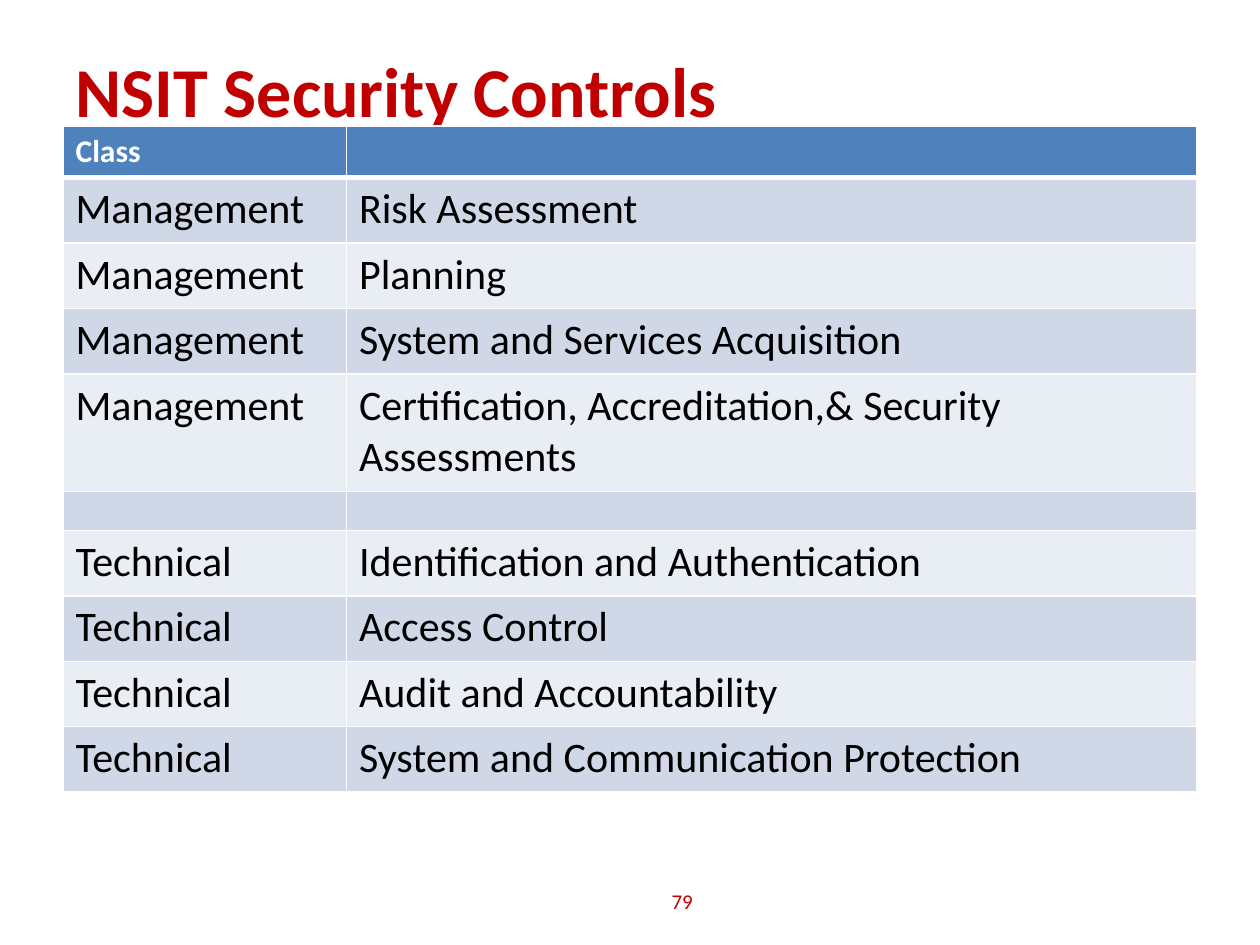
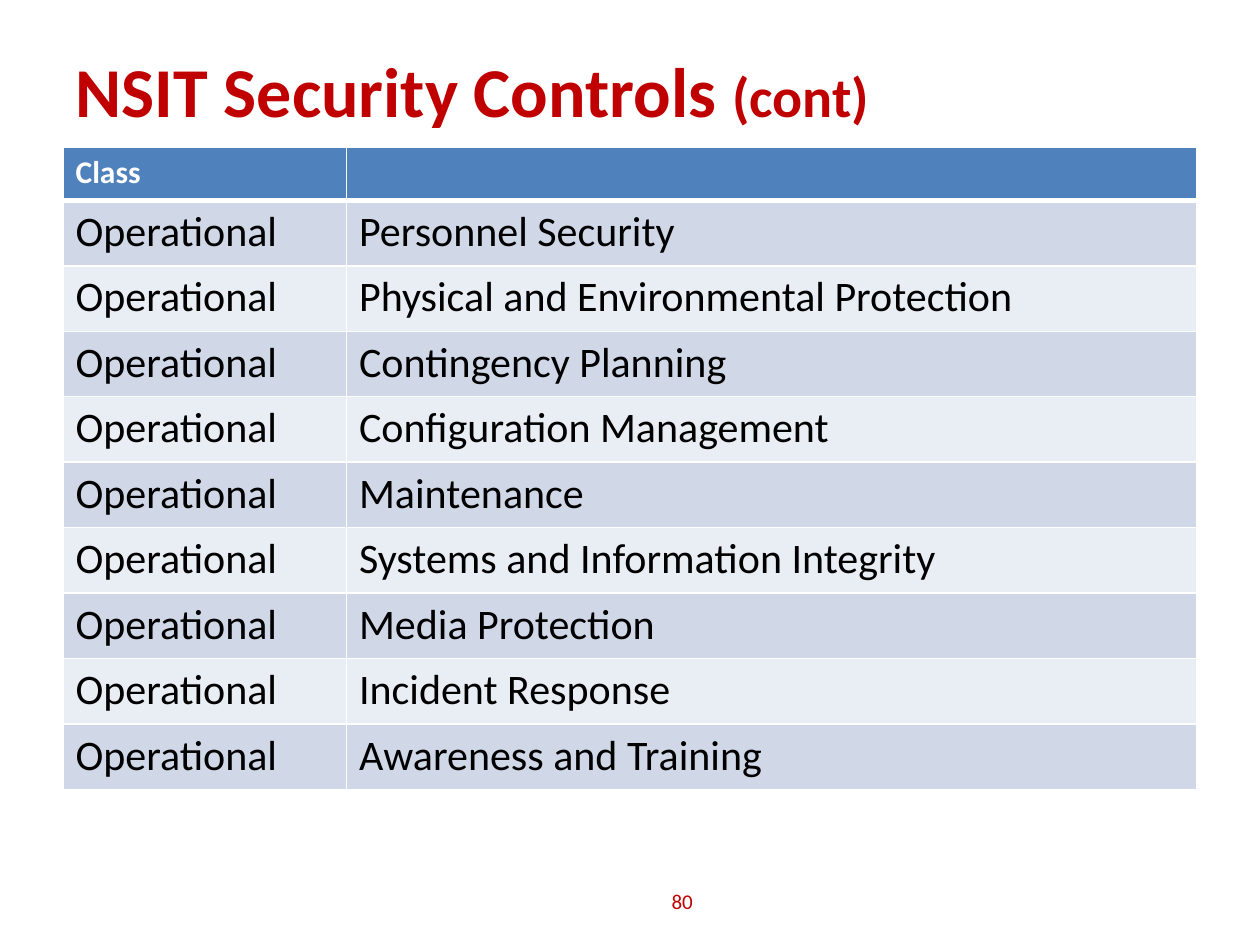
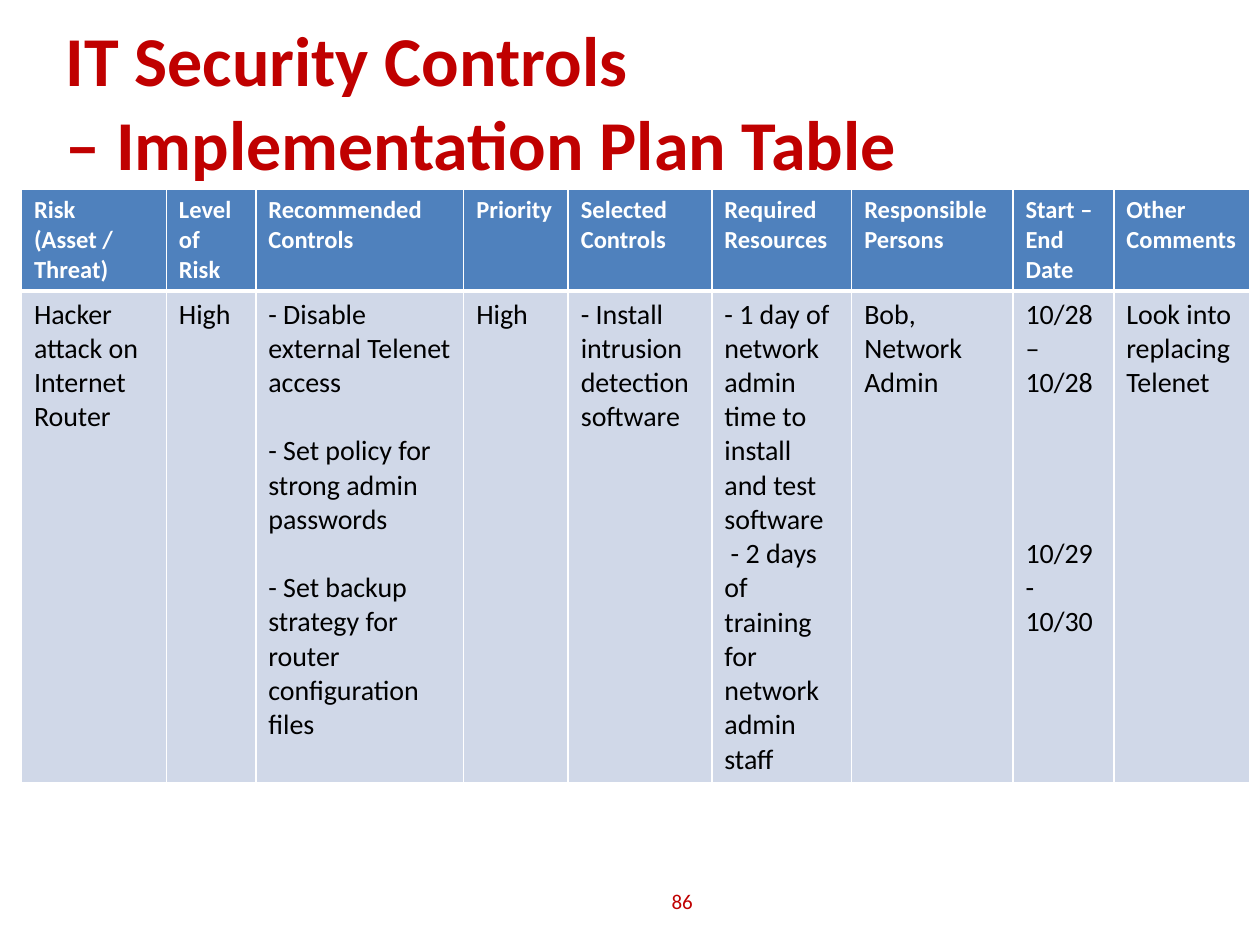
from lxml import etree
from pptx import Presentation
from pptx.dml.color import RGBColor
from pptx.enum.text import MSO_ANCHOR, MSO_AUTO_SIZE, PP_ALIGN
from pptx.oxml.ns import qn
from pptx.util import Inches, Pt

MIDDLE = MSO_ANCHOR.MIDDLE
LEFT, CENTER = PP_ALIGN.LEFT, PP_ALIGN.CENTER
NO_FIT = MSO_AUTO_SIZE.NONE

FACE = "Calibri"
HUES = {"red": "C00000", "head": "4F81BD", "dark": "D0D8E8",
        "light": "E9EDF4", "white": "FFFFFF", "black": "000000"}
HEAD_BOX = (0.5, 0.17, 9, 1.08)
PAGE_BOX = (4.25, 6.95, 2.33, 0.4)
LINE = 19.5

CLASS_COLS = [2.25, 6.75]
FIRST = [
    ["Class", ""],
    ["Management", "Risk Assessment"],
    ["Management", "Planning"],
    ["Management", "System and Services Acquisition"],
    ["Management", "Certification, Accreditation,& Security Assessments"],
    ["", ""],
    ["Technical", "Identification and Authentication"],
    ["Technical", "Access Control"],
    ["Technical", "Audit and Accountability"],
    ["Technical", "System and Communication Protection"],
]
SECOND = [["Class", ""]] + [["Operational", name] for name in (
    "Personnel Security", "Physical and Environmental Protection",
    "Contingency Planning", "Configuration Management", "Maintenance",
    "Systems and Information Integrity", "Media Protection",
    "Incident Response", "Awareness and Training")]
PLAN_COLS = [1.15, 0.71, 1.65, 0.83, 1.14, 1.11, 1.28, 0.8, 1.08]
PLAN = [
    ["Risk (Asset / Threat)", "Level of Risk", "Recommended Controls",
     "Priority", "Selected Controls", "Required Resources",
     "Responsible Persons", "Start – End Date", "Other Comments"],
    ["Hacker attack on Internet Router", "High",
     "- Disable external Telenet access\n"
     "- Set policy for strong admin passwords\n"
     "- Set backup strategy for router configuration files",
     "High", "- Install intrusion detection software",
     "- 1 day of network admin time to install and test software\n"
     " - 2 days of training for network admin staff",
     "Bob, Network Admin", "10/28 – 10/28\n10/29- 10/30",
     "Look into replacing Telenet"],
]
PLAN_GAPS = {2: 1, 7: 4}


def style(para, size, hue, bold=False):
    """Set the font of a whole paragraph."""
    font = para.font
    font.name, font.size, font.bold = FACE, Pt(size), bold
    font.color.rgb = RGBColor.from_string(HUES[hue])


def add_head(slide, box, text, tail=""):
    """Fill the title, with an optional smaller tail."""
    title = slide.shapes.title
    title.left, title.top, title.width, title.height = map(Inches, box)
    frame = title.text_frame
    frame.text = text
    frame.auto_size, frame.vertical_anchor = NO_FIT, MIDDLE
    para = frame.paragraphs[0]
    para.alignment = LEFT
    style(para, 40, "red", True)
    if tail:
        run = para.add_run()
        run.text, run.font.size = tail, Pt(32)


def add_page(slide, box, number):
    """Write the page number at the foot."""
    frame = slide.shapes.add_textbox(*map(Inches, box)).text_frame
    frame.word_wrap, frame.vertical_anchor = True, MIDDLE
    para = frame.paragraphs[0]
    para.text, para.alignment = str(number), CENTER
    style(para, 12, "red")


def add_edges(cell, row):
    """Draw white cell borders, thick below the header row."""
    props = cell._tc.get_or_add_tcPr()
    thick = {(0, "lnB"), (1, "lnT")}
    for side in ("lnL", "lnR", "lnT", "lnB"):
        width = Pt(3 if (row, side) in thick else 1)
        edge = etree.SubElement(props, qn("a:" + side), w=str(width))
        fill = etree.SubElement(edge, qn("a:solidFill"))
        etree.SubElement(fill, qn("a:srgbClr"), val=HUES["white"])


def fill_cell(cell, row, text, size, gap):
    """Write and colour one cell; gap counts the lines between paragraphs."""
    add_edges(cell, row)
    cell.fill.solid()
    band = "head" if row == 0 else "dark" if row % 2 else "light"
    cell.fill.fore_color.rgb = RGBColor.from_string(HUES[band])
    cell.text = text
    for spot, para in enumerate(cell.text_frame.paragraphs):
        if spot and gap:
            para.space_before = Pt(gap * LINE)
        style(para, size, "black" if row else "white", row == 0)
        if not text:
            etree.SubElement(para._p, qn("a:endParaRPr"), sz="1200")


def add_grid(slide, spot, cols, rows, data, sizes, gaps):
    """Place a table with a header row and banded body rows."""
    box = (*spot, sum(cols), sum(rows))
    table = slide.shapes.add_table(len(rows), len(cols), *map(Inches, box)).table
    for col, width in zip(table.columns, cols):
        col.width = Inches(width)
    for r, height in enumerate(rows):
        table.rows[r].height = Inches(height)
        for c, text in enumerate(data[r]):
            fill_cell(table.cell(r, c), r, text, sizes[min(r, 1)],
                      gaps.get(c, 0) if r else 0)


def add_slide(deck, number, head, grid, tail="", box=HEAD_BOX, sizes=(18, 24), gaps={}):
    """Build a slide with a title, a table and a page number."""
    slide = deck.slides.add_slide(deck.slide_layouts[5])
    add_head(slide, box, head, tail)
    add_grid(slide, *grid, sizes, gaps)
    add_page(slide, PAGE_BOX, number)


def main():
    """Build and save the deck."""
    deck = Presentation()
    deck.slide_width, deck.slide_height = Inches(10), Inches(7.5)
    rows = [0.41] + [0.52] * 3 + [0.93, 0.31] + [0.52] * 4
    add_slide(deck, 79, "NSIT Security Controls",
              ((0.5, 1), CLASS_COLS, rows, FIRST))
    add_slide(deck, 80, "NSIT Security Controls ",
              ((0.5, 1.17), CLASS_COLS, [0.42] + [0.52] * 9, SECOND), "(cont)")
    add_slide(deck, 86, "IT Security Controls \v– Implementation Plan Table",
              ((0.17, 1.5), PLAN_COLS, [0.8, 3.9], PLAN),
              box=(0.42, 0.17, 9.08, 1.25), sizes=(14, 16), gaps=PLAN_GAPS)
    deck.save("out.pptx")


if __name__ == "__main__":
    main()
